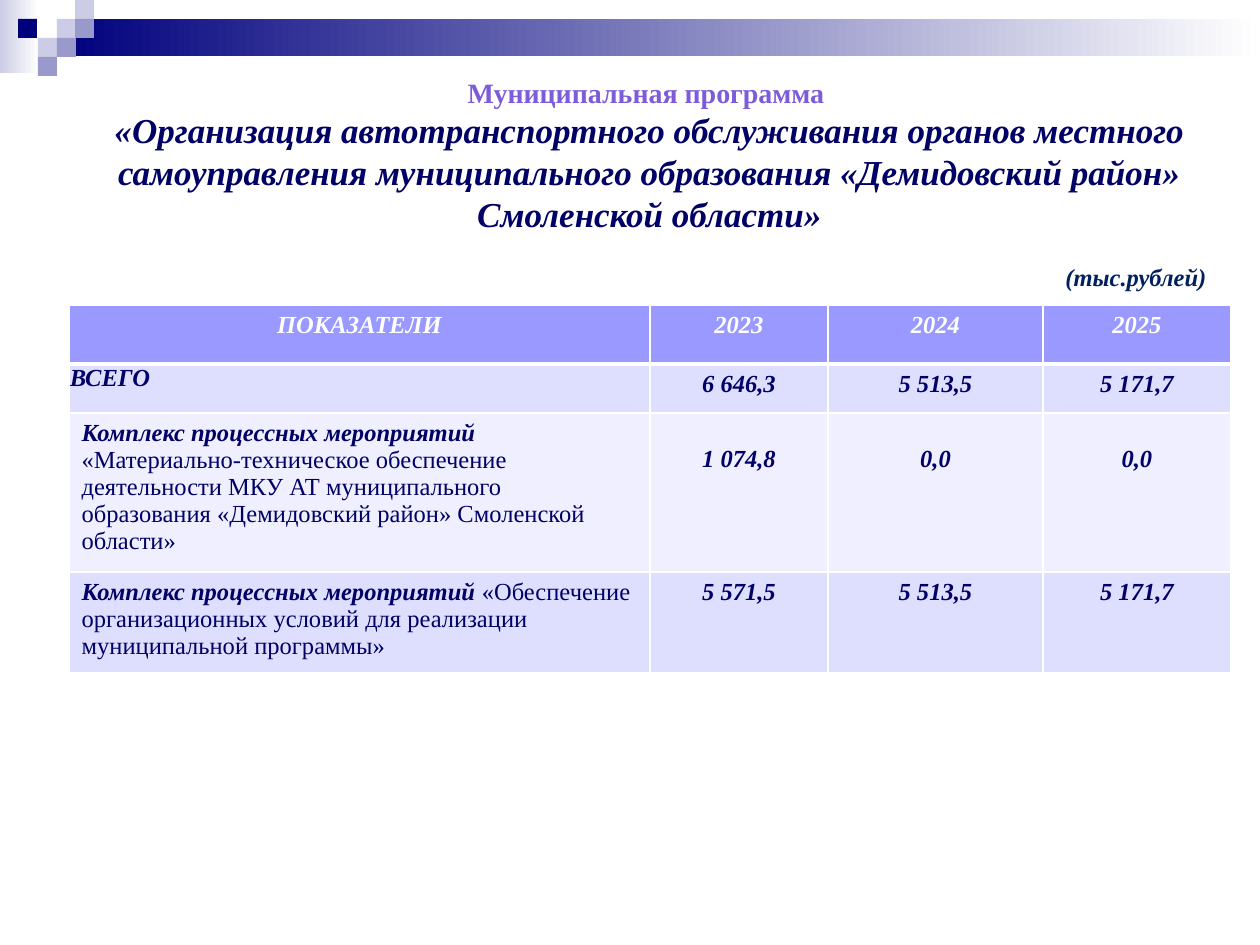
import lxml.etree
import pptx
import pptx.dml.color
import pptx.enum.shapes
import pptx.enum.text
import pptx.oxml.ns
import pptx.util

PX = 914400 / 126
FONT = "Times New Roman"
COLORS = {
    "navy": "00007D", "lavender": "CCCCE6", "violet": "9999CC", "white": "FFFFFF",
    "heading": "7D5CDA", "text": "000066", "unit": "002060",
    "header": "9999FF", "band": "DEDEFF", "light": "EFEFFF",
}
ALIGN = pptx.enum.text.PP_ALIGN


def px(*lengths):
    """Turn px into EMU."""
    return [round(length * PX) for length in lengths]


def style(font, size, color, bold=True, italic=True):
    font.name = FONT
    font.size = pptx.util.Pt(size)
    font.bold = bold
    font.italic = italic
    font.color.rgb = pptx.dml.color.RGBColor.from_string(COLORS[color])


presentation = pptx.Presentation()
presentation.slide_width, presentation.slide_height = px(1260, 945)
slide = presentation.slides.add_slide(presentation.slide_layouts[5])

# Decoration: two gradient bars and a scatter of squares
decorations = [
    (0, 0, 39, 73, ["lavender", "white"]),
    (57, 19, 1203, 37, ["navy", "white"]),
]
squares = [
    (57, 19, "lavender"), (75, 0, "lavender"), (75, 19, "violet"), (38, 38, "lavender"),
    (18, 19, "navy"), (57, 38, "violet"), (38, 57, "violet"),
]
decorations += [(left, top, 19, 19, [color]) for left, top, color in squares]
for left, top, width, height, colors in decorations:
    shape = slide.shapes.add_shape(
        pptx.enum.shapes.MSO_SHAPE.RECTANGLE, *px(left, top, width, height))
    shape.shadow.inherit = False
    shape.line.fill.background()
    if len(colors) == 1:
        shape.fill.solid()
        shape.fill.fore_color.rgb = pptx.dml.color.RGBColor.from_string(COLORS[colors[0]])
    else:
        shape.fill.gradient()
        shape.fill.gradient_angle = 0
        for position, (stop, color) in enumerate(zip(shape.fill.gradient_stops, colors)):
            stop.position = position
            stop.color.rgb = pptx.dml.color.RGBColor.from_string(COLORS[color])

# Title
title = slide.shapes.title
title.left, title.top, title.width, title.height = px(39, 69, 1221, 217)
frame = title.text_frame
frame.auto_size = pptx.enum.text.MSO_AUTO_SIZE.NONE
frame.vertical_anchor = pptx.enum.text.MSO_ANCHOR.TOP
frame.text = (
    "Муниципальная программа \n"
    "«Организация автотранспортного обслуживания органов местного самоуправления "
    "муниципального образования «Демидовский район» Смоленской области»"
)
for paragraph in frame.paragraphs:
    paragraph.alignment = ALIGN.CENTER
style(frame.paragraphs[0].font, 16, "heading", italic=False)
style(frame.paragraphs[1].font, 20, "text")

# Table
MEASURE = "Комплекс процессных мероприятий "
rows = [
    (59, "header", ["ПОКАЗАТЕЛИ"], ["2023", "2024", "2025"]),
    (49, "band", ["ВСЕГО"], ["6 646,3", "5 513,5", "5 171,7"]),
    (159, "light",
     [MEASURE, "«Материально-техническое обеспечение деятельности МКУ АТ муниципального "
               "образования «Демидовский район» Смоленской области»"],
     ["1 074,8", "0,0", "0,0"]),
    (101, "band",
     [MEASURE, "«Обеспечение организационных условий для реализации муниципальной программы»"],
     ["5 571,5", "5 513,5", "5 171,7"]),
]
column_widths = px(581, 178, 215, 188)
table = slide.shapes.add_table(
    len(rows), len(column_widths), *px(69, 305, 1162, 368)).table
for column, width in zip(table.columns, column_widths):
    column.width = width

for row_index, (height, fill, label, values) in enumerate(rows):
    table.rows[row_index].height = px(height)[0]
    for column_index, texts in enumerate([label] + [[value] for value in values]):
        cell = table.cell(row_index, column_index)
        properties = cell._tc.get_or_add_tcPr()
        for side in "LRTB":
            thick = (row_index, side) in [(0, "B"), (1, "T")]
            line = lxml.etree.SubElement(
                properties, pptx.oxml.ns.qn(f"a:ln{side}"), w=str(pptx.util.Pt(3 if thick else 1)))
            solid = lxml.etree.SubElement(line, pptx.oxml.ns.qn("a:solidFill"))
            lxml.etree.SubElement(solid, pptx.oxml.ns.qn("a:srgbClr"), val=COLORS["white"])
        cell.fill.solid()
        cell.fill.fore_color.rgb = pptx.dml.color.RGBColor.from_string(COLORS[fill])

        paragraph = cell.text_frame.paragraphs[0]
        style(paragraph.font, 14, "white" if row_index == 0 else "text")
        if row_index == 0 or column_index > 0:
            paragraph.alignment = ALIGN.CENTER
        for run_index, text in enumerate(texts):
            run = paragraph.add_run()
            run.text = text
            if run_index > 0:
                run.font.bold = run.font.italic = False
        if row_index == 1 and column_index == 0:
            cell.margin_left, cell.margin_top, cell.margin_right, cell.margin_bottom = px(1, 1, 1, 0)
        if row_index == 2 and column_index > 0:
            cell.margin_top = px(33)[0]  # values sit on the second line of the label

# Unit note
unit = slide.shapes.add_textbox(*px(1053, 256, 168, 43))
unit.text_frame.word_wrap = False
unit.text_frame.text = "(тыс.рублей)"
style(unit.text_frame.paragraphs[0].font, 14, "unit")

presentation.save("out.pptx")
